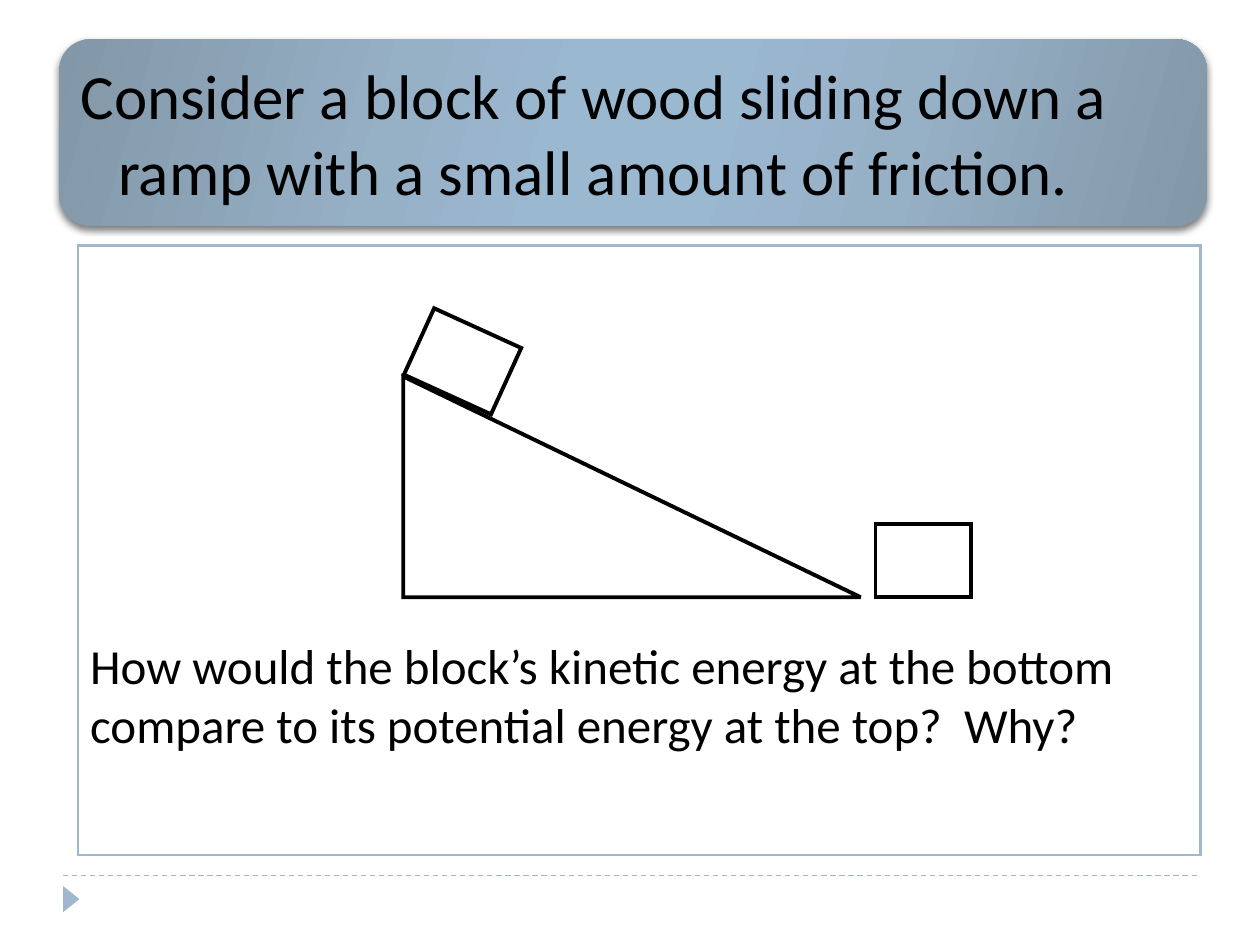
"""Build the slide about a block sliding down a ramp."""
from pptx import Presentation
from pptx.dml.color import RGBColor
from pptx.enum.dml import MSO_LINE
from pptx.enum.shapes import MSO_CONNECTOR, MSO_SHAPE as Shape
from pptx.enum.text import MSO_ANCHOR as Anchor, PP_ALIGN as Align
from pptx.oxml import parse_xml
from pptx.oxml.ns import nsdecls
from pptx.util import Cm, Pt

ACCENT, BLACK, WHITE = "9FB8CD", "000000", "FFFFFF"
BANNER_STOPS = [(0, "8297A8"), (30, "96B0C6"), (45, "9BB8D1"),
                (55, "9BB8D1"), (73, "96B0C6"), (100, "8297A8")]


def color(hex_code):
    return RGBColor.from_string(hex_code)


def drawing(tag, content="", attributes=""):
    return parse_xml(f'<a:{tag} {nsdecls("a")} {attributes}>{content}</a:{tag}>')


def add_figure(slide, kind, left, top, width, height, fill=WHITE, line=None, weight=2.25, rotation=0):
    figure = slide.shapes.add_shape(kind, Cm(left), Cm(top), Cm(width), Cm(height))
    figure.shadow.inherit = False
    figure.rotation = rotation
    figure.fill.solid()
    figure.fill.fore_color.rgb = color(fill)
    if line:
        figure.line.color.rgb = color(line)
        figure.line.width = Pt(weight)
        figure.line._get_or_add_ln().append(drawing("miter", attributes='lim="800000"'))
    else:
        figure.line.fill.background()
    return figure


def write(figure, text, size, anchor=Anchor.TOP, top_inset=0.13, hanging=0):
    frame = figure.text_frame
    frame.word_wrap = True
    frame.vertical_anchor = anchor
    frame.margin_top = Cm(top_inset)
    paragraph = frame.paragraphs[0]
    paragraph.alignment = Align.LEFT
    if hanging:
        properties = paragraph._p.get_or_add_pPr()
        properties.set("marL", str(Cm(hanging)))
        properties.set("indent", str(-Cm(hanging)))
    run = paragraph.add_run()
    run.text = text
    run.font.name = "Calibri"
    run.font.size = Pt(size)
    run.font.color.rgb = color(BLACK)


def shade_banner(banner):
    stops = "".join(f'<a:gs pos="{position * 1000}"><a:srgbClr val="{code}"/></a:gs>'
                    for position, code in BANNER_STOPS)
    gradient = drawing("gradFill", f'<a:gsLst>{stops}</a:gsLst><a:lin ang="960000" scaled="0"/>')
    shadow = drawing("effectLst", f'<a:outerShdw blurRad="{Pt(4)}" dist="{Pt(2)}" dir="5400000" '
                     f'rotWithShape="0"><a:srgbClr val="{BLACK}"><a:alpha val="50000"/>'
                     '</a:srgbClr></a:outerShdw>')
    properties = banner._element.spPr
    for tag, effect in (("solidFill", gradient), ("effectLst", shadow)):
        properties.replace(properties.find(drawing(tag).tag), effect)


def add_footer(slide):
    rule = slide.shapes.add_connector(MSO_CONNECTOR.STRAIGHT, Cm(1.27), Cm(17.65), Cm(24.13), Cm(17.65))
    rule.line.color.rgb = color(ACCENT)
    rule.line.width = Pt(0.75)
    rule.line.dash_style = MSO_LINE.DASH
    rule._element.spPr.append(drawing("effectLst"))
    add_figure(slide, Shape.ISOSCELES_TRIANGLE, 1.17, 17.96, 0.53, 0.33, fill=ACCENT, rotation=90)


def add_ramp(slide):
    add_figure(slide, Shape.RIGHT_TRIANGLE, 8.13, 7.59, 9.22, 4.45, line=BLACK)
    for left, top, tilt in ((8.36, 6.55, 24.5), (17.65, 10.57, 0)):
        add_figure(slide, Shape.RECTANGLE, left, top, 1.93, 1.47, line=BLACK, rotation=tilt)


def main():
    deck = Presentation()
    deck.slide_width, deck.slide_height = Cm(25.4), Cm(19.05)
    slide = deck.slides.add_slide(deck.slide_layouts[6])
    add_footer(slide)
    question = add_figure(slide, Shape.RECTANGLE, 1.57, 4.95, 22.63, 12.29, line=ACCENT, weight=1.5)
    write(question, "How would the block’s kinetic energy at the bottom compare to its "
          "potential energy at the top?  Why?", 28, top_inset=7.87)
    banner = add_figure(slide, Shape.ROUNDED_RECTANGLE, 1.19, 0.79, 23.14, 3.76)
    shade_banner(banner)
    write(banner, "Consider a block of wood sliding down a ramp with a small amount of friction.",
          36, anchor=Anchor.MIDDLE, hanging=0.76)
    add_ramp(slide)
    deck.save("out.pptx")


if __name__ == "__main__":
    main()
